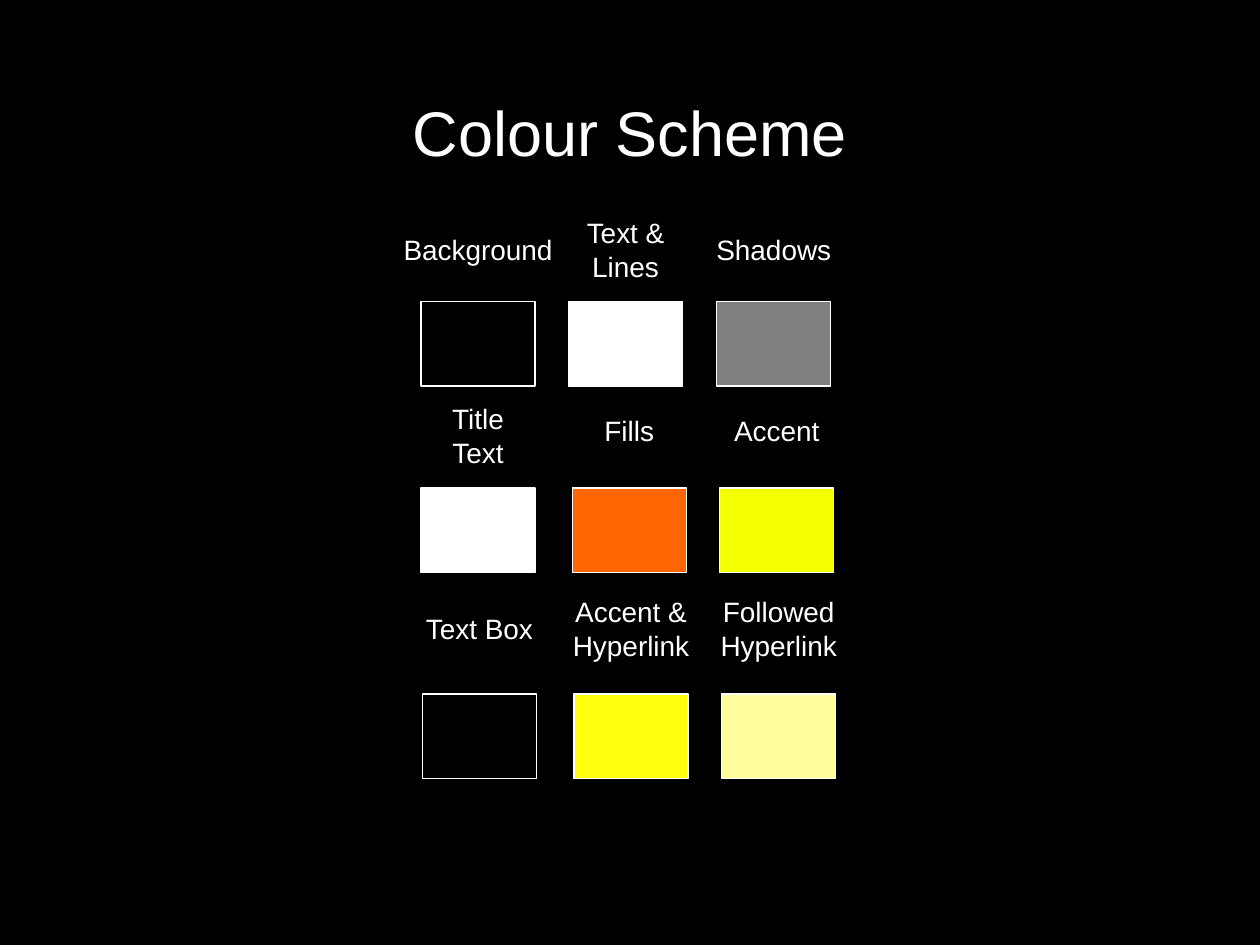
from pptx import Presentation
from pptx import util as u
from pptx.dml.color import RGBColor
from pptx.enum import shapes, text

BLACK = RGBColor(0x00, 0x00, 0x00)
WHITE = RGBColor(0xFF, 0xFF, 0xFF)
GREY = RGBColor(0x7F, 0x7F, 0x7F)
ORANGE = RGBColor(0xFF, 0x65, 0x01)
LIME = RGBColor(0xF4, 0xFF, 0x00)
YELLOW = RGBColor(0xFF, 0xFE, 0x0C)
CREAM = RGBColor(0xFF, 0xFE, 0x9D)

TITLE = "Colour Scheme"
# Each row: swatch top, then (label, label width, label middle, swatch left, fill)
ROWS = [
    (172.2, [
        ("Background", 101, 142.9, 240.6, None),
        ("Text &\nLines", 61.5, 142.8, 324.9, WHITE),
        ("Shadows", 81, 142.9, 409.6, GREY),
    ]),
    (278.8, [
        ("Title\vText", 46.4, 249.1, 240.6, WHITE),
        ("Fills", 44, 245.9, 327, ORANGE),
        ("Accent", 64.4, 245.9, 411.3, LIME),
    ]),
    (396.5, [
        ("Text Box", 77.3, 359.4, 241.4, BLACK),
        ("Accent &\nHyperlink", 82, 359.4, 328, YELLOW),
        ("Followed\nHyperlink", 82, 359.3, 412.4, CREAM),
    ]),
]
SWATCH_WIDTH, SWATCH_HEIGHT = 65.2, 48.4
LABEL_HEIGHTS = {1: 26.6, 2: 46.1}


def add_text(slide, wording, left, top, width, height, size=16, wrap=False,
             anchor=text.MSO_ANCHOR.TOP):
    box = slide.shapes.add_textbox(*map(u.Pt, (left, top, width, height)))
    frame = box.text_frame
    frame.word_wrap = wrap
    frame.vertical_anchor = anchor
    frame.text = wording
    for paragraph in frame.paragraphs:
        paragraph.alignment = text.PP_ALIGN.CENTER
        for run in paragraph.runs:
            run.font.name = "Arial"
            run.font.size = u.Pt(size)
            run.font.color.rgb = WHITE
    return box


def add_swatch(slide, left, top, fill):
    swatch = slide.shapes.add_shape(
        shapes.MSO_SHAPE.RECTANGLE,
        *map(u.Pt, (left, top, SWATCH_WIDTH, SWATCH_HEIGHT)))
    swatch.shadow.inherit = False
    if fill is None:
        swatch.fill.background()
    else:
        swatch.fill.solid()
        swatch.fill.fore_color.rgb = fill
    swatch.line.color.rgb = WHITE
    swatch.line.width = u.Pt(0.75)


def main():
    deck = Presentation()
    deck.slide_width, deck.slide_height = u.Pt(720), u.Pt(540)
    slide = deck.slides.add_slide(deck.slide_layouts[6])
    slide.background.fill.solid()
    slide.background.fill.fore_color.rgb = BLACK

    add_text(slide, TITLE, 36, 30.2, 648, 90, size=36, wrap=True,
             anchor=text.MSO_ANCHOR.MIDDLE)
    for swatch_top, entries in ROWS:
        for label, label_width, label_middle, swatch_left, fill in entries:
            add_swatch(slide, swatch_left, swatch_top, fill)
            label_height = LABEL_HEIGHTS[len(label.splitlines())]
            label_left = swatch_left + (SWATCH_WIDTH - label_width) / 2
            label_box = add_text(slide, label, label_left,
                                 label_middle - label_height / 2,
                                 label_width, label_height)
            label_box.text_frame.auto_size = text.MSO_AUTO_SIZE.SHAPE_TO_FIT_TEXT

    deck.save("out.pptx")


if __name__ == "__main__":
    main()
